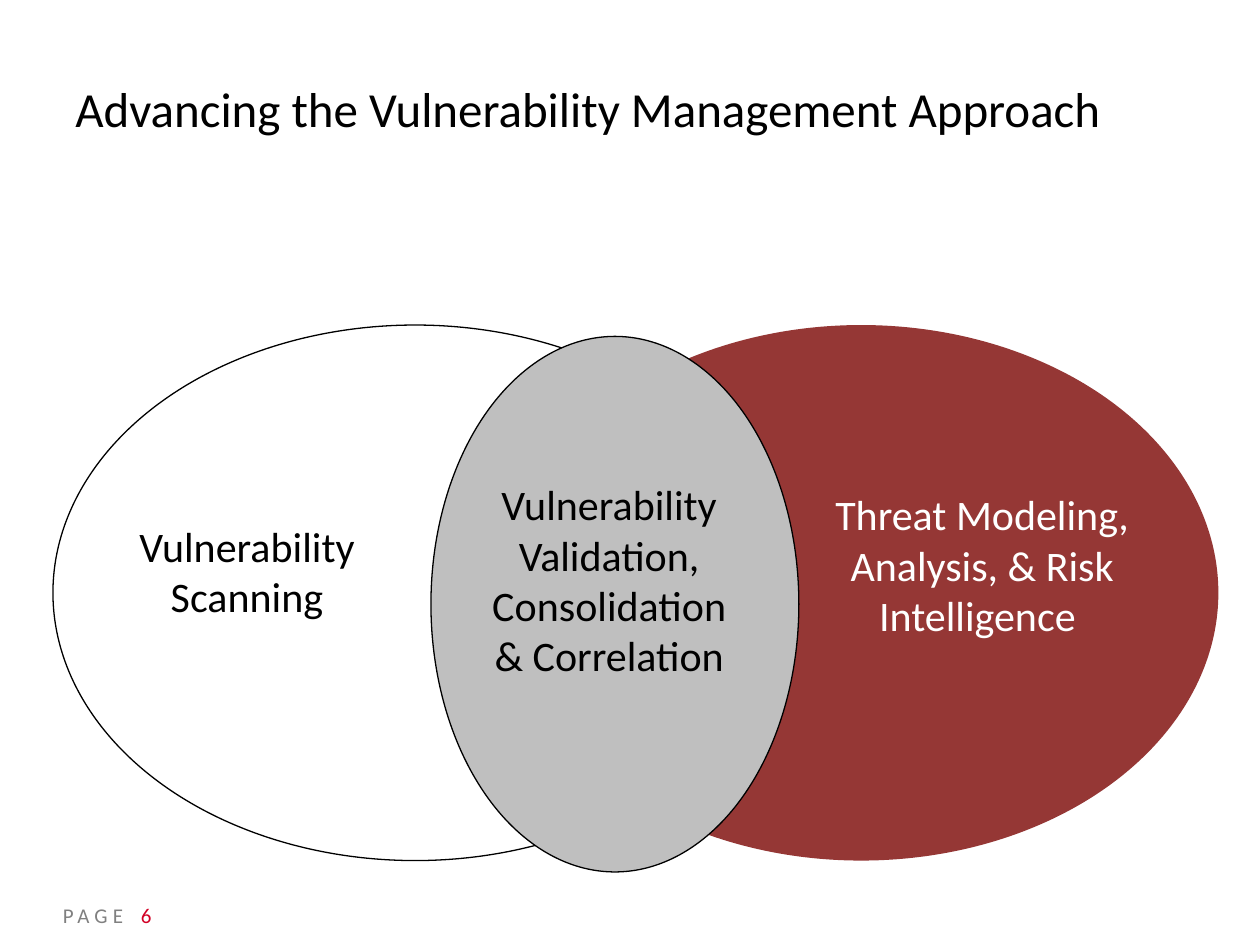
"""Build the vulnerability management slide with three overlapping ellipses."""
from pptx import Presentation
from pptx.dml.color import RGBColor
from pptx.enum.shapes import MSO_SHAPE
from pptx.enum.text import MSO_ANCHOR, MSO_AUTO_SIZE, PP_ALIGN
from pptx.util import Inches, Pt

COLORS = {
    "black": "000000",
    "white": "FFFFFF",
    "gray": "808080",
    "silver": "BFBFBF",
    "maroon": "953735",
    "red": "D20025",
}
FONT = "Calibri"
ELLIPSE_HEIGHT = 4.25

TITLE = ("Advancing the Vulnerability Management Approach", (0.5, 0.45, 9, 0.69))
FOOTER = [
    ("PAGE", (0.4, 7.18, 0.9, 0.17), "gray", MSO_ANCHOR.MIDDLE),
    ("6", (1.02, 7.12, 2.33, 0.29), "red", MSO_ANCHOR.BOTTOM),
]
ELLIPSES = [
    (0.42, 2.58, 5.75, None, "black"),
    (4, 2.58, 5.67, "maroon", None),
    (3.42, 2.67, 2.92, "silver", "black"),
]
LABELS = [
    ("Vulnerability Scanning", (0.92, 4.08, 2.08, 0.91), "black"),
    ("Threat Modeling, Analysis, & Risk Intelligence ", (6.42, 3.83, 2.75, 1.31), "white"),
    ("Vulnerability Validation, Consolidation & Correlation", (3.67, 3.75, 2.33, 1.72), "black"),
]


def rgb(name):
    return RGBColor.from_string(COLORS[name])


def add_text(slide, text, place, size=24, color="black", align=PP_ALIGN.LEFT,
             anchor=MSO_ANCHOR.TOP, spacing=0, grow=False):
    box = slide.shapes.add_textbox(*map(Inches, place))
    frame = box.text_frame
    frame.word_wrap = True
    frame.vertical_anchor = anchor
    frame.auto_size = MSO_AUTO_SIZE.SHAPE_TO_FIT_TEXT if grow else MSO_AUTO_SIZE.NONE
    paragraph = frame.paragraphs[0]
    paragraph.alignment = align
    run = paragraph.add_run()
    run.text = text
    run.font.name = FONT
    run.font.size = Pt(size)
    run.font.color.rgb = rgb(color)
    if spacing:
        run.font._element.set("spc", str(spacing * 100))


def add_ellipse(slide, left, top, width, fill, line):
    ellipse = slide.shapes.add_shape(
        MSO_SHAPE.OVAL, *map(Inches, (left, top, width, ELLIPSE_HEIGHT)))
    ellipse.shadow.inherit = False
    if fill:
        ellipse.fill.solid()
        ellipse.fill.fore_color.rgb = rgb(fill)
    else:
        ellipse.fill.background()
    if line:
        ellipse.line.color.rgb = rgb(line)
        ellipse.line.width = Pt(0.75)
    else:
        ellipse.line.fill.background()


def main():
    deck = Presentation()
    deck.slide_width, deck.slide_height = Inches(10), Inches(7.5)
    slide = deck.slides.add_slide(deck.slide_layouts[6])
    slide.background.fill.solid()
    slide.background.fill.fore_color.rgb = rgb("white")

    title, title_place = TITLE
    add_text(slide, title, title_place, size=28, anchor=MSO_ANCHOR.BOTTOM)
    for text, place, color, anchor in FOOTER:
        add_text(slide, text, place, size=12, color=color, anchor=anchor, spacing=3)
    for ellipse in ELLIPSES:
        add_ellipse(slide, *ellipse)
    for text, place, color in LABELS:
        add_text(slide, text, place, color=color, align=PP_ALIGN.CENTER, grow=True)

    deck.save("out.pptx")


if __name__ == "__main__":
    main()
